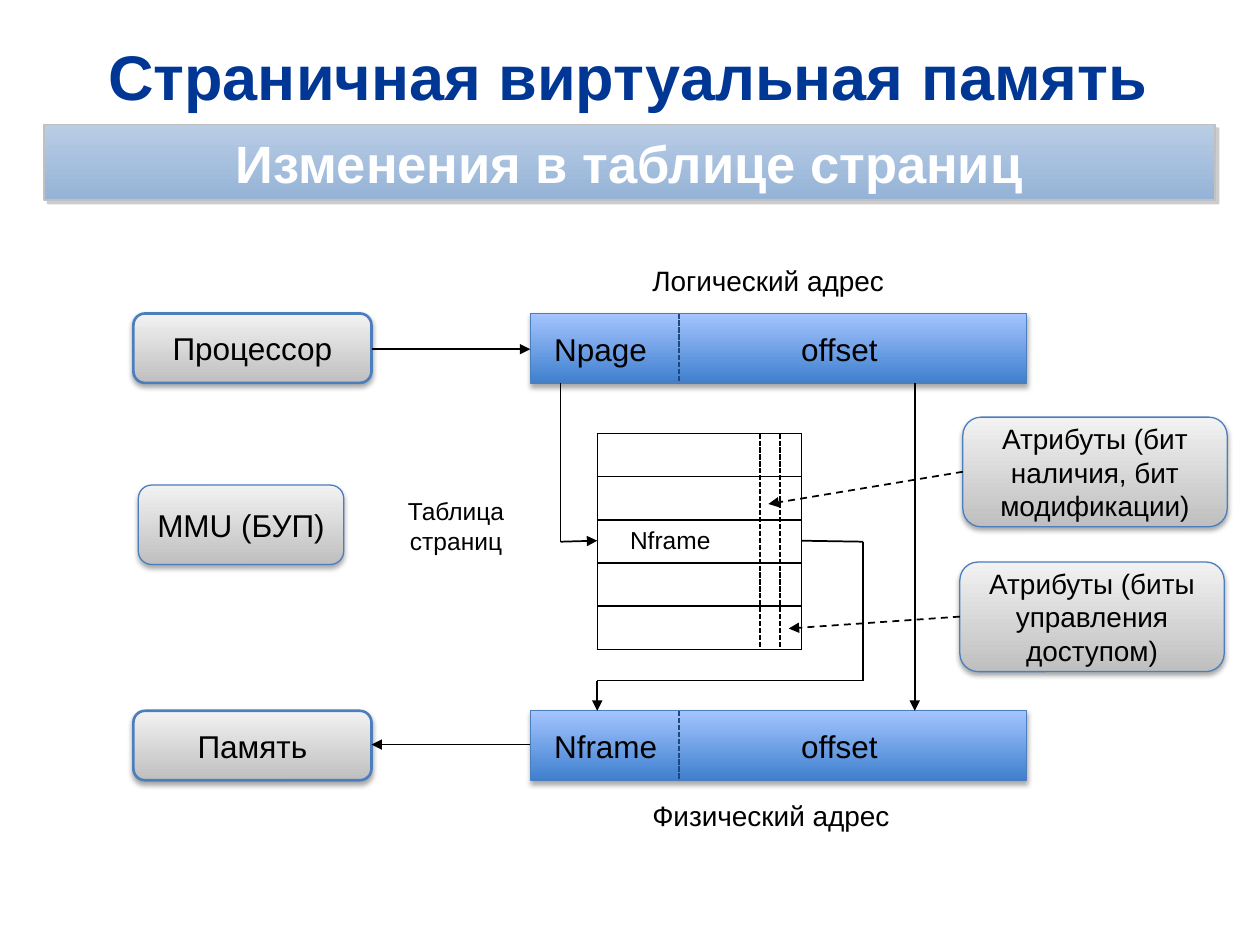
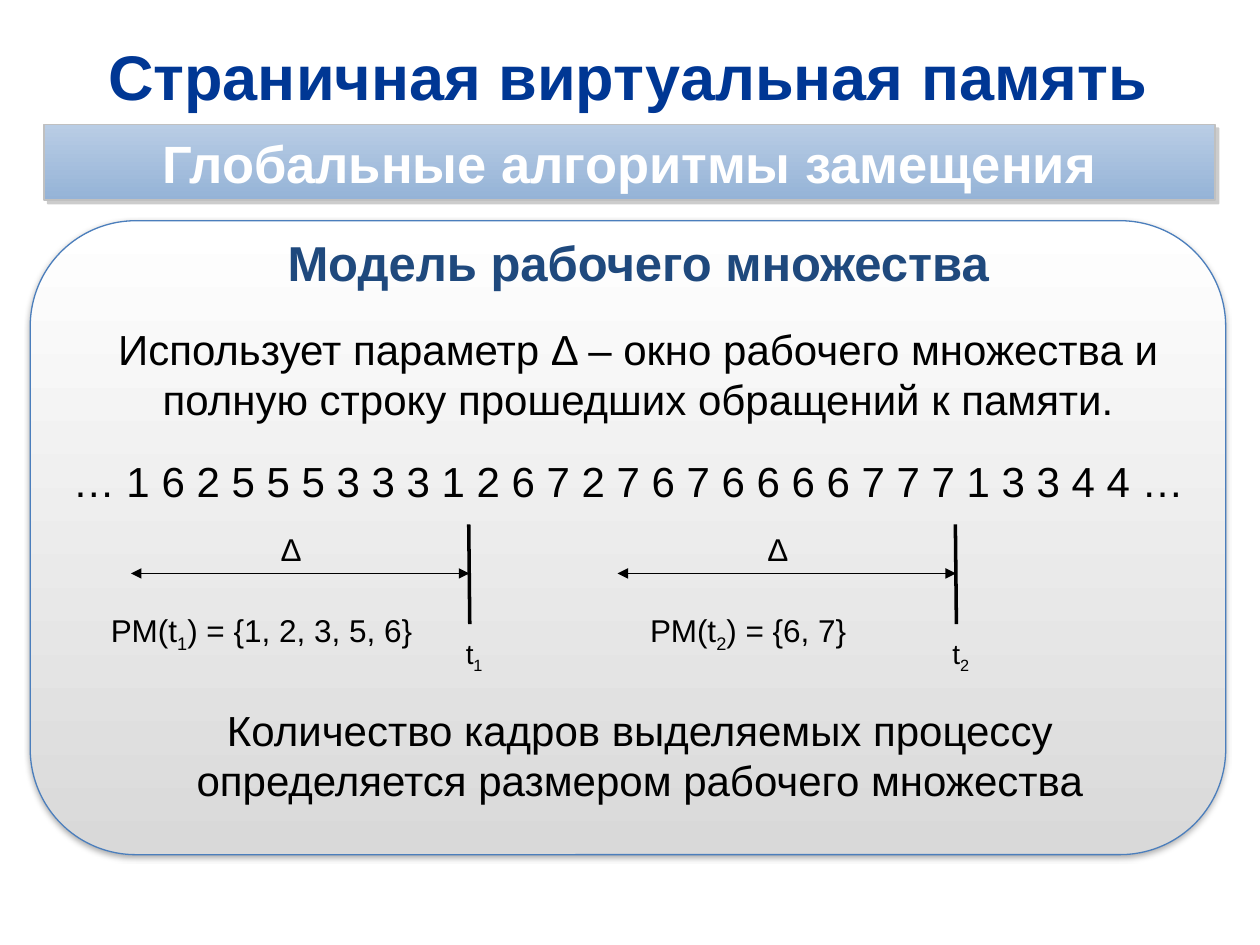
from lxml.etree import SubElement
from pptx import Presentation
from pptx.dml.color import RGBColor
from pptx.enum.dml import MSO_LINE
from pptx.enum.shapes import MSO_CONNECTOR, MSO_SHAPE
from pptx.enum.text import MSO_ANCHOR, PP_ALIGN
from pptx.oxml.ns import qn
from pptx.util import Cm, Pt

COLORS = {
    "title": "003794", "heading": "1F497D", "text": "000000", "white": "FFFFFF",
    "edge": "4B7EBC", "banner_edge": "C0C0C0", "banner_shadow": "808080",
    "banner_top": "B9CDE5", "banner_bottom": "95B3D7",
    "gray_top": "F2F2F2", "gray_bottom": "BFBFBF",
    "blue_top": "A4C4FF", "blue_bottom": "3F80CE", "panel_bottom": "D9D9D9",
}
RGB = {name: RGBColor.from_string(value) for name, value in COLORS.items()}
SOFT = ("text", 35, 3.1, 1.8, 90)
LOOKS = {
    "banner": (MSO_SHAPE.RECTANGLE, "banner_top", "banner_bottom", "banner_edge",
               ("banner_shadow", 40, 0, 3, 45)),
    "node": (MSO_SHAPE.ROUNDED_RECTANGLE, "gray_top", "gray_bottom", "edge", SOFT),
    "address": (MSO_SHAPE.RECTANGLE, "blue_top", "blue_bottom", "edge", SOFT),
    "panel": (MSO_SHAPE.ROUNDED_RECTANGLE, "white", "panel_bottom", "edge", SOFT),
}
CENTER, LEFT = PP_ALIGN.CENTER, PP_ALIGN.LEFT


def add_box(s, at, text="", size=18, look=None, weight=0.75, color="text",
            bold=False, align=CENTER, middle=False):
    at = [Cm(v) for v in at]
    if look:
        kind, top, bottom, edge, (tint, alpha, blur, dist, angle) = LOOKS[look]
        sp = s.shapes.add_shape(kind, *at)
        sp.fill.gradient()
        sp.fill.gradient_angle = 270
        for stop, name, pos in zip(sp.fill.gradient_stops, (top, bottom), (0, 1)):
            stop.color.rgb = RGB[name]
            stop.position = pos
        sp.line.color.rgb = RGB[edge]
        sp.line.width = Pt(weight)
        sp.shadow.inherit = False
        effects = sp._element.spPr.find(qn("a:effectLst"))
        shadow = SubElement(effects, qn("a:outerShdw"), blurRad=str(Pt(blur)),
                            dist=str(Pt(dist)), dir=str(angle * 60000), rotWithShape="0")
        clr = SubElement(shadow, qn("a:srgbClr"), val=COLORS[tint])
        SubElement(clr, qn("a:alpha"), val=str(alpha * 1000))
    else:
        sp = s.shapes.add_textbox(*at)
    tf = sp.text_frame
    tf.word_wrap = True
    tf.vertical_anchor = MSO_ANCHOR.MIDDLE if look or middle else MSO_ANCHOR.TOP
    p = tf.paragraphs[0]
    p.alignment = align
    fmt = {"name": "Arial", "size": Pt(size), "bold": bold}
    for i, part in enumerate(text.split("_") if text else []):
        r = p.add_run()
        r.text = part
        for key, value in fmt.items():
            setattr(r.font, key, value)
        r.font.color.rgb = RGB[color]
        if i % 2:
            r._r.get_or_add_rPr().set("baseline", "-25000")
    return sp


def add_line(s, x1, y1, x2, y2, ends="", weight=1, dash=None, color="text"):
    c = s.shapes.add_connector(MSO_CONNECTOR.STRAIGHT, Cm(x1), Cm(y1), Cm(x2), Cm(y2))
    c.line.color.rgb = RGB[color]
    c.line.width = Pt(weight)
    if dash:
        c.line.dash_style = dash
    for end in ends.split():
        SubElement(c.line._get_or_add_ln(), qn(f"a:{end}End"), type="triangle")
    SubElement(c._element.spPr, qn("a:effectLst"))


prs = Presentation()
prs.slide_width, prs.slide_height = Cm(25.4), Cm(19.05)

slides = []
for banner in ("Изменения в таблице страниц", "Глобальные алгоритмы замещения"):
    s = prs.slides.add_slide(prs.slide_layouts[6])
    if slides:
        add_box(s, (0.61, 4.45, 24.1, 12.78), look="panel")
    add_box(s, (0.61, 0.66, 24.1, 1.73), "Страничная виртуальная память", 36,
            color="title", bold=True, middle=True)
    add_box(s, (0.89, 2.51, 23.6, 1.52), banner, 30, "banner", 1, "white", True)
    slides.append(s)

s = slides[0]
BAR_X, BAR_W, BAR_H, SPLIT_X = 10.69, 10.01, 1.4, 13.69
LOGICAL_Y, PHYSICAL_Y = 6.32, 14.33
for y, node, label, label_y, field in (
    (LOGICAL_Y, "Процессор", "Логический адрес", 5.18, "Npage"),
    (PHYSICAL_Y, "Память", "Физический адрес", 15.98, "Nframe"),
):
    add_box(s, (2.69, y, 4.8, BAR_H), node, look="node", weight=1.5)
    add_box(s, (BAR_X, y, BAR_W, BAR_H), look="address")
    add_line(s, SPLIT_X, y, SPLIT_X, y + BAR_H, dash=MSO_LINE.SQUARE_DOT, color="heading")
    add_box(s, (12.9, label_y, 5.41, 0.95), label, 16, align=LEFT)
    add_box(s, (10.92, y + 0.2, 2.8, 1), field, align=LEFT)
    add_box(s, (15.9, y + 0.2, 2.21, 1), "offset", align=LEFT)

TABLE_X, TABLE_Y, TABLE_W, ROW_H, ROWS = 12.04, 8.74, 4.12, 0.87, 5
TABLE_BOTTOM = TABLE_Y + ROWS * ROW_H
tbl = s.shapes.add_table(ROWS, 1, Cm(TABLE_X), Cm(TABLE_Y), Cm(TABLE_W), Cm(ROWS * ROW_H)).table
tbl.first_row = tbl.horz_banding = False
for i, row in enumerate(tbl.rows):
    row.height = Cm(ROW_H)
    cell = row.cells[0]
    cell_fmt = {"margin_left": Cm(0.66), "margin_top": 0, "margin_bottom": 0,
                "vertical_anchor": MSO_ANCHOR.MIDDLE}
    for key, value in cell_fmt.items():
        setattr(cell, key, value)
    tcPr = cell._tc.get_or_add_tcPr()
    for side in "LRTB":
        ln = SubElement(tcPr, qn(f"a:ln{side}"), w=str(Pt(1)))
        fill = SubElement(ln, qn("a:solidFill"))
        SubElement(fill, qn("a:srgbClr"), val=COLORS["text"])
    cell.fill.background()
    if i == 2:
        r = cell.text_frame.paragraphs[0].add_run()
        r.text = "Nframe"
        for key, value in {"name": "Arial", "size": Pt(14), "bold": False}.items():
            setattr(r.font, key, value)
        r.font.color.rgb = RGB["text"]

for x in (15.32, 15.72):
    add_line(s, x, TABLE_Y, x, TABLE_BOTTOM, dash=MSO_LINE.SQUARE_DOT)
add_box(s, (7.29, 9.88, 3.81, 1.45), "Таблица страниц", 14)
add_box(s, (2.79, 9.78, 4.14, 1.6), "MMU (БУП)", look="node")

for line in (
    (7.49, 7.04, BAR_X, 7.04, "tail"),
    (BAR_X, 15.01, 7.49, 15.01, "tail"),
    (18.44, LOGICAL_Y + BAR_H, 18.44, PHYSICAL_Y, "tail"),
    (11.3, LOGICAL_Y + BAR_H, 11.3, 10.92),
    (11.3, 10.92, TABLE_X, 10.9, "tail"),
    (17.4, 10.92, TABLE_X + TABLE_W, 10.9),
    (17.4, 10.92, 17.4, 13.72),
    (17.4, 13.72, TABLE_X, 13.72),
    (TABLE_X, 13.72, TABLE_X, PHYSICAL_Y, "tail"),
):
    add_line(s, *line)

for x, y, text, tip_x, tip_y in (
    (19.35, 11.33, "Атрибуты (биты управления доступом)", 15.9, 12.67),
    (19.41, 8.41, "Атрибуты (бит наличия, бит модификации)", 15.49, 10.16),
):
    add_box(s, (x, y, 5.33, 2.21), text, 16, "node")
    add_line(s, x, y + 1.1, tip_x, tip_y, "tail", dash=MSO_LINE.DASH)

s = slides[1]
sp = add_box(s, (1.22, 4.57, 23.29, 5.82), "Модель рабочего множества", 28,
             color="heading", bold=True)
tf = sp.text_frame
tf.paragraphs[0].space_after = Pt(6)
for text, align in (
    ("Использует параметр Δ – окно рабочего множества и полную строку прошедших "
     "обращений к памяти.", CENTER),
    ("… 1 6 2 5 5 5 3 3 3 1 2 6 7 2 7 6 7 6 6 6 6 7 7 7 1 3 3 4 4 …", LEFT),
):
    p = tf.add_paragraph()
    for key, value in {"alignment": align, "space_before": Pt(12), "space_after": Pt(6)}.items():
        setattr(p, key, value)
    r = p.add_run()
    r.text = text
    for key, value in {"name": "Arial", "size": Pt(24), "bold": False}.items():
        setattr(r.font, key, value)
    r.font.color.rgb = RGB["text"]

WINDOW_STEP = 9.81
for i, pages in enumerate(("1, 2, 3, 5, 6", "6, 7")):
    dx = i * WINDOW_STEP
    add_line(s, 9.45 + dx, 10.57, 9.47 + dx, 12.58, weight=2)
    add_line(s, 2.64 + dx, 11.56, 9.46 + dx, 11.56, "head tail")
    add_box(s, (9.14 + dx, 12.7, 1.22, 0.95), f"t_{i + 1}_", 16, align=LEFT)
    add_box(s, (5.41 + dx, 10.57, 1.04, 1), "Δ", align=LEFT)
    add_box(s, (1.91 + dx, 12.19, 6.73, 1), f"РМ(t_{i + 1}_) = {{{pages}}}")

add_box(s, (2.64, 14.07, 20.52, 2.31),
        "Количество кадров выделяемых процессу определяется размером рабочего множества", 24)

prs.save("out.pptx")
